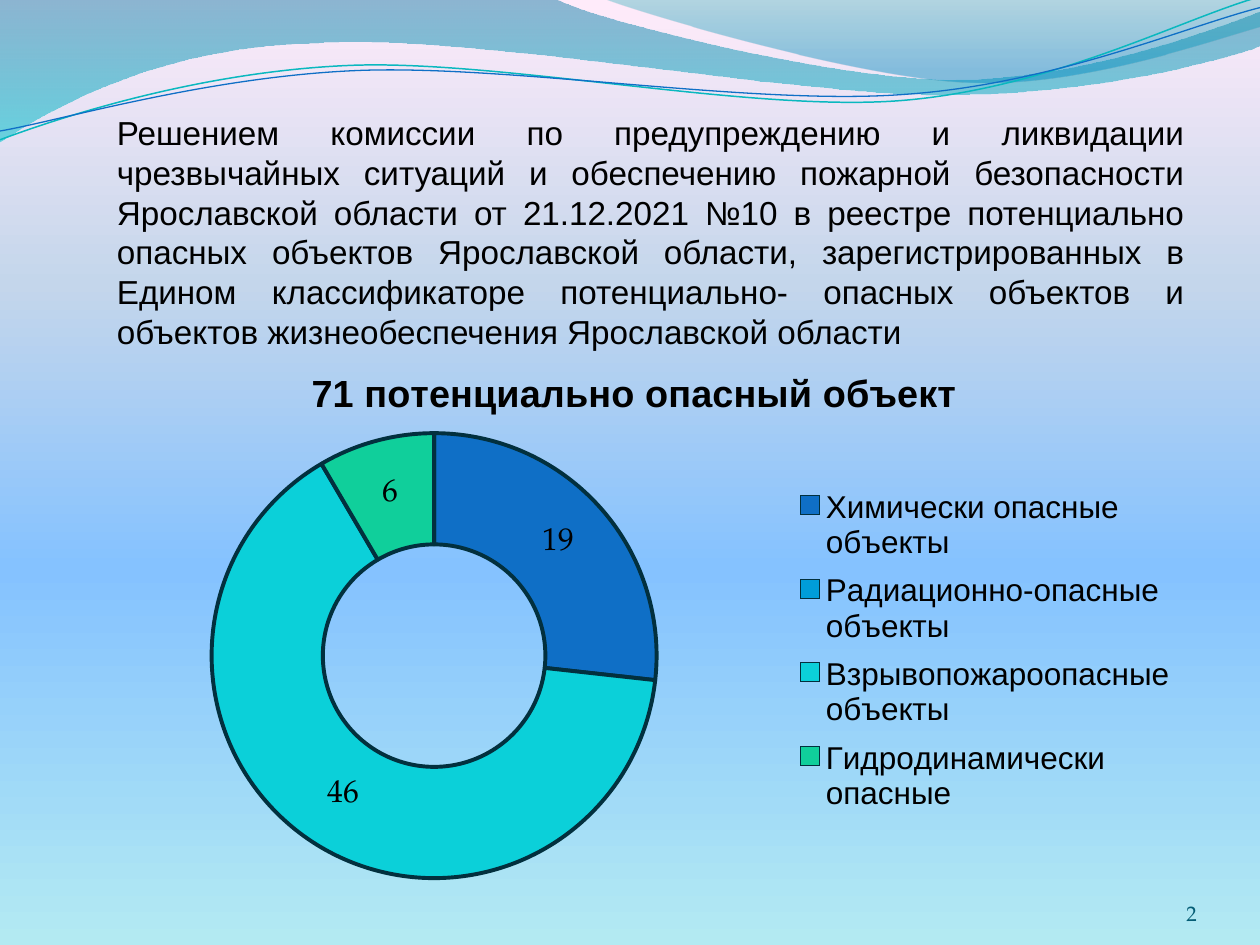
"""Build a slide on hazardous facilities with a wave header and a doughnut chart."""
from dataclasses import dataclass
from math import cos, radians, sin

from lxml import etree
from pptx import Presentation
from pptx.chart.data import CategoryChartData
from pptx.dml.color import RGBColor
from pptx.enum.chart import XL_CHART_TYPE, XL_LEGEND_POSITION
from pptx.enum.text import MSO_ANCHOR, PP_ALIGN
from pptx.oxml.ns import qn
from pptx.util import Inches, Pt

DOUGHNUT = XL_CHART_TYPE.DOUGHNUT
LEGEND_RIGHT = XL_LEGEND_POSITION.RIGHT
TOP, BOTTOM = MSO_ANCHOR.TOP, MSO_ANCHOR.BOTTOM
JUSTIFY, RIGHT = PP_ALIGN.JUSTIFY, PP_ALIGN.RIGHT
SANS, SERIF = "Arial", "TeX Gyre Pagella"
BLACK = "000000"

DECISION = (
    "Решением комиссии по предупреждению и ликвидации чрезвычайных ситуаций и обеспечению "
    "пожарной безопасности Ярославской области от 21.12.2021 №10 в реестре потенциально "
    "опасных объектов Ярославской области, зарегистрированных в Едином классификаторе "
    "потенциально- опасных объектов и объектов жизнеобеспечения Ярославской области"
)


@dataclass
class GradientStop:
    position: int
    color: str
    opacity: int = 100


@dataclass
class Wave:
    """A start point and segments of one point (line) or three points (Bezier curve)."""
    box: tuple
    start: tuple
    segments: list
    gradient: tuple = ()
    line_color: str = ""
    line_width: float = 0
    rotation: float = 0


@dataclass
class Facility:
    name: str
    count: int
    color: str


BACKGROUND = (GradientStop(0, "B3EAF2"), GradientStop(40, "85C2FF"),
              GradientStop(70, "C4D6EB"), GradientStop(100, "FFEBFA"))

WAVES = [
    Wave((-0.01, -0.01, 10.02, 1.14), (0, 0), [
        [(4.4, -0.01)],
        [(4.76, 0.17), (6.64, 0.63), (7.58, 0.63)],
        [(8.53, 0.63), (9.58, 0.26), (10, 0.09)],
        [(10.01, 0.36)],
        [(9.83, 0.44), (8.7, 0.76), (7.46, 0.75)],
        [(6.22, 0.75), (3.82, 0.28), (2.57, 0.34)],
        [(1.29, 0.36), (0.46, 0.83), (-0.01, 1.13)],
        [(0, 0)],
    ], gradient=(GradientStop(0, "0074A1", 45), GradientStop(100, "00C6CF", 55))),
    Wave((4.79, -0.01, 5.21, 0.7), (4.79, -0.01), [
        [(5.09, 0.11), (6.82, 0.62), (7.69, 0.65)],
        [(8.56, 0.69), (9.61, 0.32), (10, 0.21)],
        [(10, 0)],
        [(4.79, -0.01)],
    ], gradient=(GradientStop(0, "00A1A9", 30), GradientStop(80, "008BBF", 45))),
    Wave((-0.02, 0.22, 10.02, 0.71), (0, 1.11), [
        [(0.48, 0.93), (1.58, 0.57), (2.77, 0.52)],
        [(3.95, 0.47), (5.93, 0.89), (7.13, 0.8)],
        [(8.33, 0.71), (9.38, 0.15), (9.98, -0.02)],
    ], line_color="0AB8BF", line_width=0.85, rotation=357.3),
    Wave((-0.02, 0.3, 10.03, 0.58), (0, 1.04), [
        [(0.47, 0.96), (1.64, 0.61), (2.83, 0.56)],
        [(4.03, 0.51), (5.97, 0.84), (7.17, 0.75)],
        [(8.36, 0.67), (9.41, 0.21), (10, 0.06)],
    ], line_color="0F6FC6", line_width=0.75, rotation=357.3),
]

FACILITIES = [
    Facility("Химически опасные объекты", 19, "0F6FC6"),
    Facility("Радиационно-опасные объекты", 0, "009DD9"),
    Facility("Взрывопожароопасные объекты", 46, "0BD0D9"),
    Facility("Гидродинамически опасные", 6, "10CF9B"),
]


def rgb(color: str) -> RGBColor:
    return RGBColor.from_string(color)


def style_font(font, name: str, size: float, color: str = BLACK, bold: bool = False) -> None:
    font.name, font.size, font.bold = name, Pt(size), bold
    font.color.rgb = rgb(color)


def set_gradient(fill, properties, stops: tuple, angle: int) -> None:
    fill.gradient()
    gradient = properties.find(qn("a:gradFill"))
    for child in list(gradient):
        gradient.remove(child)
    stop_list = etree.SubElement(gradient, qn("a:gsLst"))
    for stop in stops:
        item = etree.SubElement(stop_list, qn("a:gs"), pos=str(stop.position * 1000))
        color = etree.SubElement(item, qn("a:srgbClr"), val=stop.color)
        if stop.opacity < 100:
            etree.SubElement(color, qn("a:alpha"), val=str(stop.opacity * 1000))
    etree.SubElement(gradient, qn("a:lin"), ang=str(angle * 60000), scaled="0")


def to_local(wave: Wave, point: tuple) -> tuple:
    """Undo the rotation about the box centre and measure from the box corner."""
    left, top, width, height = wave.box
    angle = radians(-wave.rotation)
    x, y = point[0] - left - width / 2, point[1] - top - height / 2
    return (Inches(x * cos(angle) - y * sin(angle) + width / 2),
            Inches(x * sin(angle) + y * cos(angle) + height / 2))


def bend_outline(shape, wave: Wave) -> None:
    outline = shape.element.spPr.find(".//" + qn("a:path"))
    for child in list(outline):
        outline.remove(child)
    outline.set("w", str(shape.width))
    outline.set("h", str(shape.height))
    commands = [("a:moveTo", [wave.start])]
    commands += [("a:lnTo" if len(segment) == 1 else "a:cubicBezTo", segment)
                 for segment in wave.segments]
    for tag, points in commands:
        command = etree.SubElement(outline, qn(tag))
        for point in points:
            x, y = to_local(wave, point)
            etree.SubElement(command, qn("a:pt"), x=str(x), y=str(y))
    if wave.gradient:
        etree.SubElement(outline, qn("a:close"))


def draw_wave(slide, wave: Wave) -> None:
    builder = slide.shapes.build_freeform(*map(Inches, wave.start), scale=1.0)
    builder.add_line_segments([tuple(map(Inches, segment[-1])) for segment in wave.segments])
    shape = builder.convert_to_shape()
    shape.left, shape.top, shape.width, shape.height = map(Inches, wave.box)
    bend_outline(shape, wave)
    shape.rotation = wave.rotation
    shape.shadow.inherit = False
    if wave.gradient:
        set_gradient(shape.fill, shape.element.spPr, wave.gradient, 90)
        shape.line.fill.background()
    else:
        shape.fill.background()
        shape.line.color.rgb = rgb(wave.line_color)
        shape.line.width = Pt(wave.line_width)


def add_text(slide, text: str, box: tuple, alignment, anchor):
    frame = slide.shapes.add_textbox(*map(Inches, box)).text_frame
    frame.word_wrap = True
    frame.vertical_anchor = anchor
    paragraph = frame.paragraphs[0]
    paragraph.text, paragraph.alignment = text, alignment
    return frame, paragraph


def set_layout(chart, tag: str, index: int, inner: bool = False, **fractions: float) -> None:
    parent = chart.element.find(".//" + qn(tag))
    for old in parent.findall(qn("c:layout")):
        parent.remove(old)
    layout = etree.Element(qn("c:layout"))
    parent.insert(index, layout)
    manual = etree.SubElement(layout, qn("c:manualLayout"))
    if inner:
        etree.SubElement(manual, qn("c:layoutTarget"), val="inner")
    for axis in "xy":
        etree.SubElement(manual, qn(f"c:{axis}Mode"), val="edge")
    for name, value in fractions.items():
        etree.SubElement(manual, qn(f"c:{name}"), val=str(value))


def add_facility_chart(slide, facilities: list) -> None:
    data = CategoryChartData()
    data.categories = [facility.name for facility in facilities]
    data.add_series("Series 1", [facility.count for facility in facilities])
    box = map(Inches, (0.62, 2.73, 8.83, 4.38))
    chart = slide.shapes.add_chart(DOUGHNUT, *box, data).chart
    style_font(chart.font, SERIF, 18)

    chart.has_title = True
    paragraph = chart.chart_title.text_frame.paragraphs[0]
    paragraph.text = "71 потенциально опасный объект"
    style_font(paragraph.font, SANS, 21.6, bold=True)

    chart.has_legend = True
    chart.legend.position = LEGEND_RIGHT
    chart.legend.include_in_layout = False
    style_font(chart.legend.font, SANS, 18)
    set_layout(chart, "c:legend", 1, x=0.64, y=0.24, w=0.35, h=0.63)

    plot = chart.plots[0]
    plot.vary_by_categories = True
    plot.has_data_labels = True
    labels = plot.data_labels
    labels.show_value, labels.show_percentage = True, False
    labels.number_format, labels.number_format_is_linked = "0;;", False
    style_font(labels.font, SERIF, 18)
    set_layout(chart, "c:plotArea", 0, inner=True, x=0.12, y=0.16, w=0.4, h=0.81)
    for index, facility in enumerate(facilities):
        point_format = plot.series[0].points[index].format
        point_format.fill.solid()
        point_format.fill.fore_color.rgb = rgb(facility.color)
        point_format.line.color.rgb = rgb("02303E")
        point_format.line.width = Pt(2.25)


def main() -> None:
    presentation = Presentation()
    presentation.slide_width, presentation.slide_height = Inches(10), Inches(7.5)
    slide = presentation.slides.add_slide(presentation.slide_layouts[6])
    background_fill = slide.background.fill
    background_fill.gradient()
    set_gradient(background_fill, slide.element.find(".//" + qn("p:bgPr")), BACKGROUND, 270)
    for wave in WAVES:
        draw_wave(slide, wave)

    frame, paragraph = add_text(slide, "2", (8.67, 6.95, 0.83, 0.4), RIGHT, BOTTOM)
    frame.margin_left = frame.margin_right = frame.margin_top = frame.margin_bottom = 0
    style_font(paragraph.font, SERIF, 12, "045D75")

    _, paragraph = add_text(slide, DECISION, (0.83, 0.84, 8.67, 2.32), JUSTIFY, TOP)
    style_font(paragraph.font, SANS, 19)

    add_facility_chart(slide, FACILITIES)
    presentation.save("out.pptx")


if __name__ == "__main__":
    main()
